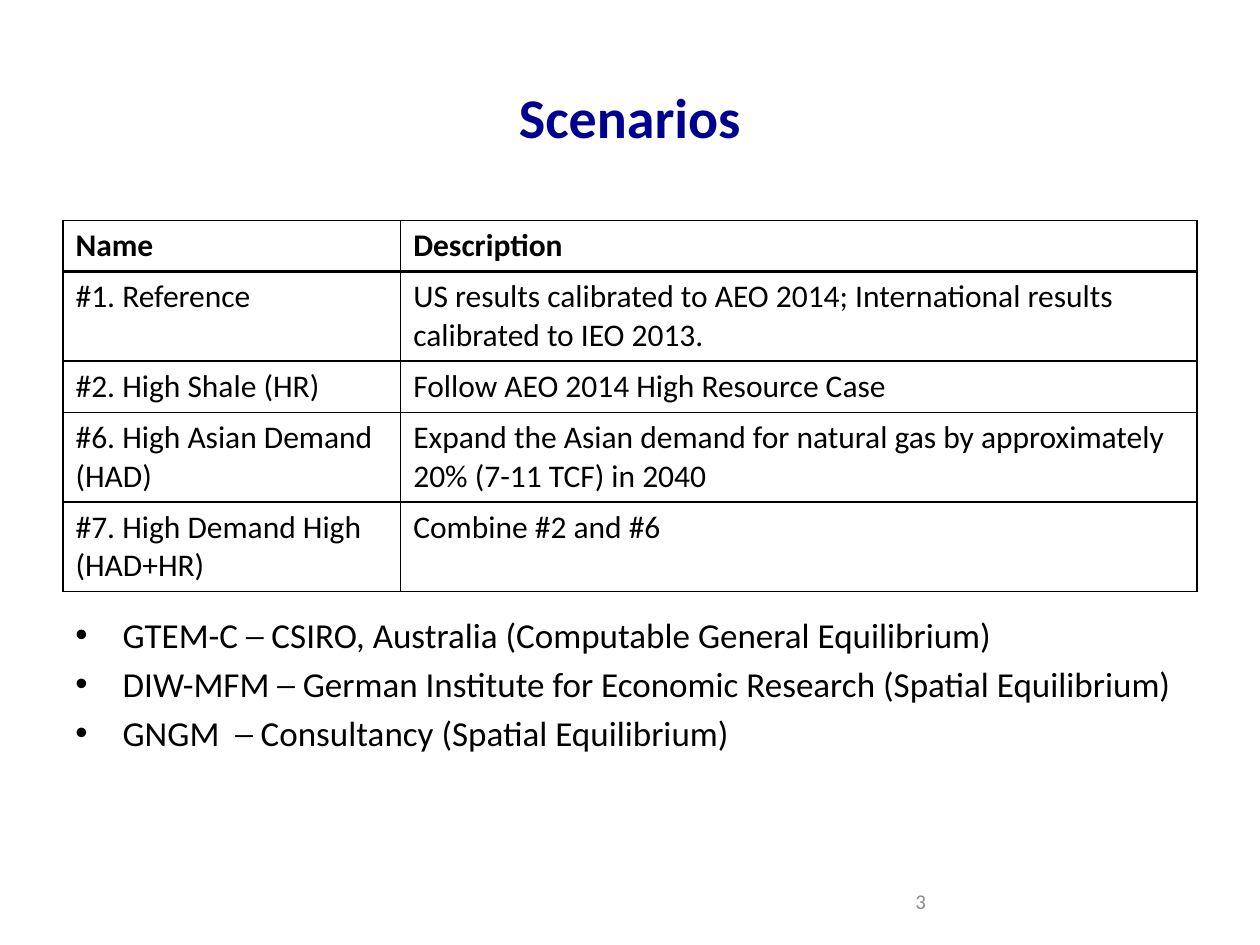
from lxml.etree import SubElement
from pptx import Presentation
from pptx.dml.color import RGBColor
from pptx.enum.text import MSO_ANCHOR, PP_ALIGN
from pptx.oxml.ns import qn
from pptx.util import Pt

COLORS = {"title": "000090", "text": "000000", "number": "8C8C8C"}
SCENARIOS = [
    ("Name", "Description"),
    ("#1. Reference",
     "US results calibrated to AEO 2014; International results calibrated to IEO 2013."),
    ("#2. High Shale (HR)", "Follow AEO 2014 High Resource Case"),
    ("#6. High Asian Demand (HAD)",
     "Expand the Asian demand for natural gas by approximately 20% (7-11 TCF) in 2040"),
    ("#7. High Demand High (HAD+HR)", "Combine #2 and #6"),
]
MODELS = [
    "GTEM-C ─ CSIRO, Australia (Computable General Equilibrium)",
    "DIW-MFM ─ German Institute for Economic Research (Spatial Equilibrium)",
    "GNGM  ─ Consultancy (Spatial Equilibrium)",
]


class SlideBuilder:
    font = "Calibri"

    def __init__(self, slide):
        self.slide = slide

    def run(self, p, text, size, color="text", bold=False):
        r = p.add_run()
        r.text = text
        r.font.name = self.font
        r.font.size = Pt(size)
        r.font.bold = bold
        r.font.color.rgb = RGBColor.from_string(COLORS[color])

    def box(self, x, y, w, h, anchor=MSO_ANCHOR.TOP):
        tf = self.slide.shapes.add_textbox(Pt(x), Pt(y), Pt(w), Pt(h)).text_frame
        tf.word_wrap = True
        tf.vertical_anchor = anchor
        return tf

    def label(self, x, y, w, h, text, size, color, bold=False, align=PP_ALIGN.LEFT):
        p = self.box(x, y, w, h, MSO_ANCHOR.MIDDLE).paragraphs[0]
        p.alignment = align
        self.run(p, text, size, color, bold)

    def bullets(self, x, y, w, h, items, size, indent=27):
        tf = self.box(x, y, w, h)
        for i, item in enumerate(items):
            p = tf.add_paragraph() if i else tf.paragraphs[0]
            pPr = p._p.get_or_add_pPr()
            pPr.set("marL", str(Pt(indent)))
            pPr.set("indent", str(-Pt(indent)))
            SubElement(pPr, qn("a:buFont"), typeface="Arial")
            SubElement(pPr, qn("a:buChar"), char="•")
            if i:
                p.space_before = Pt(size * 0.2)
            self.run(p, item, size)

    def borders(self, cell, **widths):
        tcPr = cell._tc.get_or_add_tcPr()
        for side, width in widths.items():
            ln = SubElement(tcPr, qn(f"a:ln{side}"), w=str(Pt(width)))
            fill = SubElement(ln, qn("a:solidFill"))
            SubElement(fill, qn("a:srgbClr"), val=COLORS["text"])

    def table(self, x, y, col_widths, row_heights, rows, size):
        frame = self.slide.shapes.add_table(
            len(rows), len(col_widths), Pt(x), Pt(y),
            Pt(sum(col_widths)), Pt(sum(row_heights)))
        table = frame.table
        table.first_row = table.horz_banding = False
        for col, width in zip(table.columns, col_widths):
            col.width = Pt(width)
        for i, (row, height, texts) in enumerate(zip(table.rows, row_heights, rows)):
            row.height = Pt(height)
            for cell, text in zip(row.cells, texts):
                self.run(cell.text_frame.paragraphs[0], text, size, bold=i == 0)
                self.borders(cell, L=1, R=1, T=2 if i == 1 else 1, B=2 if i == 0 else 1)
                cell.fill.background()


def main():
    prs = Presentation()
    prs.slide_width, prs.slide_height = Pt(720), Pt(540)
    s = SlideBuilder(prs.slides.add_slide(prs.slide_layouts[6]))
    s.label(36, 21.6, 648, 90, "Scenarios", 32, "title", True, PP_ALIGN.CENTER)
    one_line, two_lines = 29.2, 51.2
    s.table(36, 126, [193, 455],
            [one_line, two_lines, one_line, two_lines, two_lines], SCENARIOS, 18)
    s.label(516, 500.4, 168, 28.8, "3", 12, "number")
    s.bullets(36, 347, 656.6, 109.4, MODELS, 20)
    prs.save("out.pptx")


if __name__ == "__main__":
    main()
